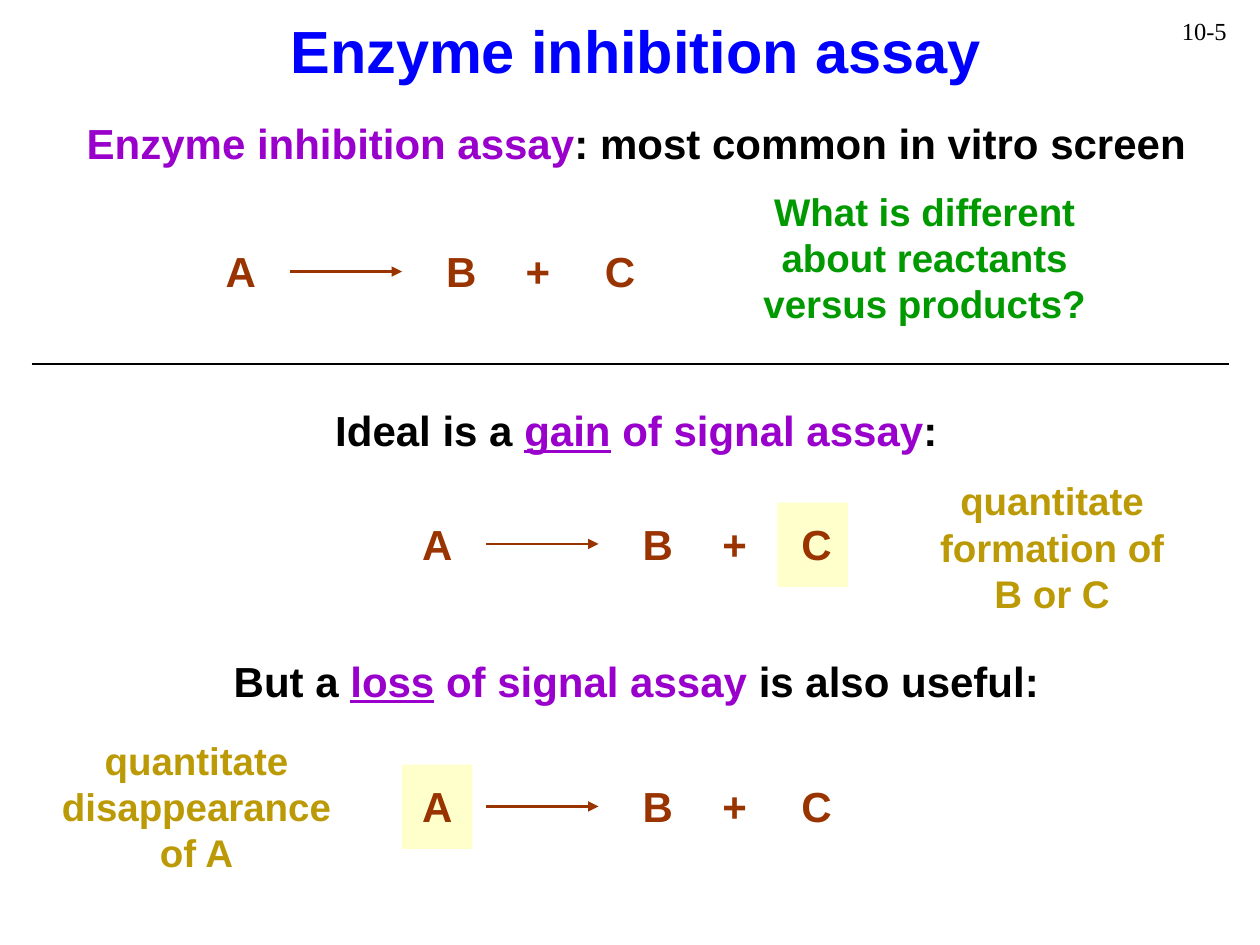
from lxml import etree
from pptx import Presentation
from pptx.dml.color import RGBColor
from pptx.enum.shapes import MSO_CONNECTOR, MSO_SHAPE
from pptx.enum.text import MSO_AUTO_SIZE, PP_ALIGN
from pptx.oxml.ns import qn
from pptx.util import Pt

STRAIGHT = MSO_CONNECTOR.STRAIGHT
RECTANGLE = MSO_SHAPE.RECTANGLE
GROW = MSO_AUTO_SIZE.SHAPE_TO_FIT_TEXT
CENTER = PP_ALIGN.CENTER
LEFT = PP_ALIGN.LEFT

BLACK = RGBColor(0x00, 0x00, 0x00)
BLUE = RGBColor(0x00, 0x00, 0xFF)
PURPLE = RGBColor(0x99, 0x00, 0xCC)
GREEN = RGBColor(0x00, 0x99, 0x00)
BROWN = RGBColor(0x99, 0x33, 0x00)
GOLD = RGBColor(0xBC, 0x9A, 0x05)
PALE_YELLOW = RGBColor(0xFF, 0xFF, 0xCC)


def add_text(shapes, text, *, at, size, color=BLACK, font="Arial", bold=True,
             align=CENTER, wrap=True, hanging=0):
    box = shapes.add_textbox(*[Pt(length) for length in at])
    frame = box.text_frame
    frame.word_wrap = wrap
    frame.auto_size = GROW
    para = frame.paragraphs[0]
    para.alignment = align
    if hanging:
        properties = para._p.get_or_add_pPr()
        properties.set("marL", str(Pt(hanging)))
        properties.set("indent", str(-Pt(hanging)))
    pieces = [(text, color, False)] if isinstance(text, str) else text
    for words, tint, underlined in pieces:
        span = para.add_run()
        span.text = words
        span.font.name = font
        span.font.size = Pt(size)
        span.font.bold = bold
        span.font.underline = underlined
        span.font.color.rgb = tint


def add_line(shapes, left, right, y, *, color, width, arrow=False):
    line = shapes.add_connector(STRAIGHT, Pt(left), Pt(y), Pt(right), Pt(y))
    line.line.color.rgb = color
    line.line.width = Pt(width)
    if arrow:
        tip = etree.SubElement(line.line._get_or_add_ln(), qn("a:tailEnd"))
        tip.set("type", "triangle")
    etree.SubElement(line._element.spPr, qn("a:effectLst"))


deck = Presentation()
deck.slide_width = Pt(720)
deck.slide_height = Pt(540)
page = deck.slides.add_slide(deck.slide_layouts[6])
shapes = page.shapes

add_text(shapes, "10-5", at=(668.2, 5.8, 49.7, 23.8), size=14,
         font="Times New Roman", bold=False, align=LEFT, wrap=False)

for left, top in [(229.7, 437), (444.2, 287.3)]:
    highlight = shapes.add_shape(RECTANGLE, Pt(left), Pt(top), Pt(40.3), Pt(48.2))
    highlight.shadow.inherit = False
    highlight.fill.solid()
    highlight.fill.fore_color.rgb = PALE_YELLOW
    highlight.line.fill.background()

add_text(shapes, "Enzyme inhibition assay", at=(24.5, 4.3, 677.5, 48.2),
         size=34, color=BLUE)

headings = [
    (63.4, [("Enzyme inhibition assay", PURPLE, False),
            (": most common in vitro screen", BLACK, False)]),
    (227.8, [("Ideal is a ", BLACK, False), ("gain", PURPLE, True),
             (" of signal assay", PURPLE, False), (":", BLACK, False)]),
    (370.8, [("But a ", BLACK, False), ("loss", PURPLE, True),
             (" of signal assay", PURPLE, False),
             (" is also useful:", BLACK, False)]),
]
for top, pieces in headings:
    add_text(shapes, pieces, at=(36.7, top, 653.8, 36), size=24, hanging=18)

add_line(shapes, 18, 702, 208, color=BLACK, width=0.75)

for left, top in [(117.4, 137), (229.7, 292.6), (229.7, 442.6)]:
    reaction = shapes.add_group_shape().shapes
    for symbol, offset in [("A", 0), ("B", 126), ("+", 169.9), ("C", 216.7)]:
        add_text(reaction, symbol, at=(left + offset, top, 40.3, 36),
                 size=24, color=BROWN)
    add_line(reaction, left + 48.2, left + 112.3, top + 18.2,
             color=BROWN, width=1.5, arrow=True)

notes = [
    ("What is different about reactants versus products?", GREEN, 415.4, 103.7, 226),
    ("quantitate formation of B or C", GOLD, 528.5, 269.3, 145.4),
    ("quantitate disappearance of A", GOLD, 25.2, 417.6, 174.2),
]
for text, color, left, top, width in notes:
    add_text(shapes, text, at=(left, top, width, 86.4), size=22, color=color)

deck.save("out.pptx")
